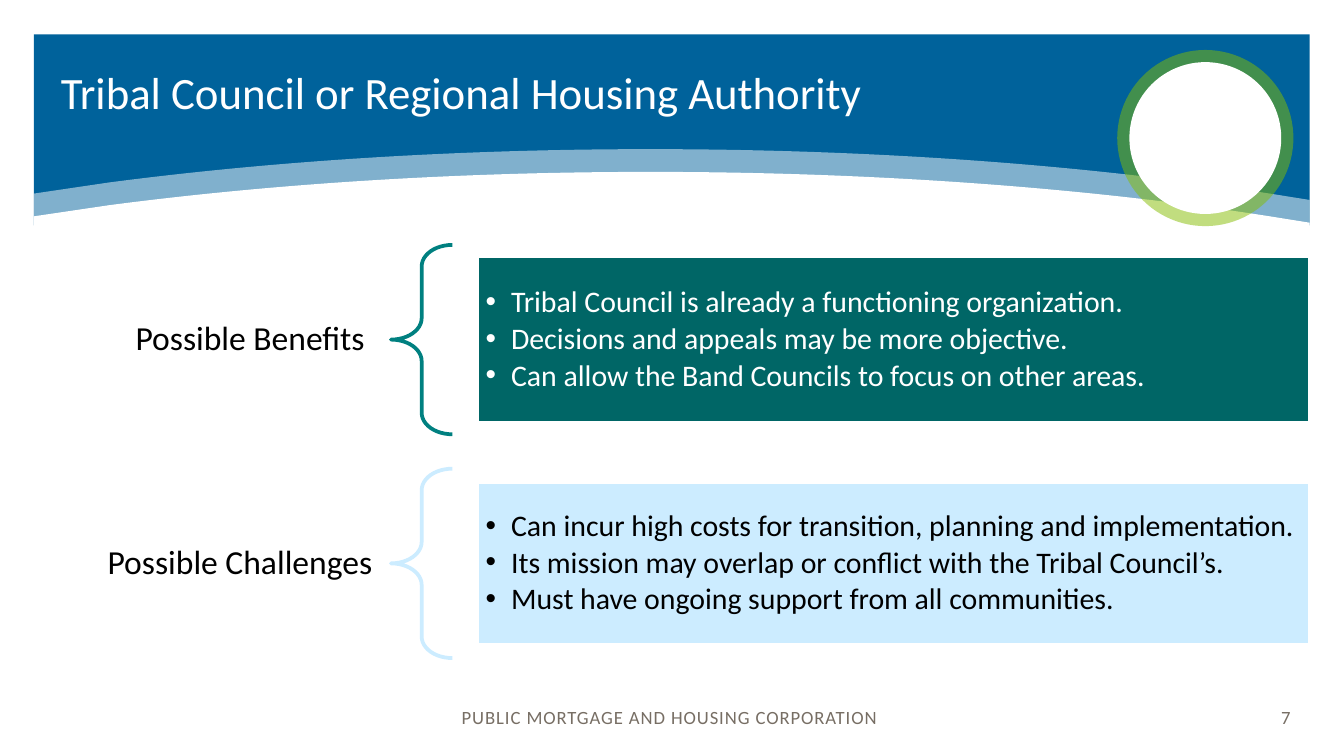
from lxml import etree
from pptx import Presentation
from pptx.dml.color import RGBColor
from pptx.enum import shapes, text
from pptx.oxml import ns
from pptx.util import Cm, Pt

COLORS = {
    "blue": "00629B", "white": "FFFFFF", "black": "000000", "green": "84BD00",
    "grey": "776E64", "teal": "008080", "dark_teal": "006666", "sky": "CCECFF",
}
SHAPE = shapes.MSO_SHAPE


def paint(shape, fill=None, line=None, alpha=None):
    """Set fill, opacity in percent and a 2 pt line; None leaves a part empty."""
    if fill:
        shape.fill.solid()
        shape.fill.fore_color.rgb = RGBColor.from_string(COLORS[fill])
    else:
        shape.fill.background()
    if alpha:
        color = shape.fill._xPr.find(".//" + ns.qn("a:srgbClr"))
        etree.SubElement(color, ns.qn("a:alpha"), val=str(alpha * 1000))
    if line:
        shape.line.color.rgb = RGBColor.from_string(COLORS[line])
        shape.line.width = Pt(2)
    else:
        shape.line.fill.background()


def write(shape, lines, size, color, margins, spc=None, bullet=False, **fmt):
    """Fill a shape with one paragraph per line; fmt holds paragraph attributes."""
    tf = shape.text_frame
    tf.word_wrap = True
    tf.auto_size = text.MSO_AUTO_SIZE.NONE
    tf.vertical_anchor = text.MSO_ANCHOR.MIDDLE
    tf.margin_left = tf.margin_right = Cm(margins[0])
    tf.margin_top = tf.margin_bottom = Cm(margins[1])
    for i, line in enumerate(lines):
        p = tf.paragraphs[0] if i == 0 else tf.add_paragraph()
        for name, value in fmt.items():
            setattr(p, name, value)
        if bullet:
            pPr = p._p.get_or_add_pPr()
            pPr.set("marL", str(Cm(0.48)))
            pPr.set("indent", str(-Cm(0.48)))
            etree.SubElement(pPr, ns.qn("a:buChar"), char="•")
        r = p.add_run()
        r.text = line
        r.font.name = "Calibri"
        r.font.size = Pt(size)
        r.font.color.rgb = RGBColor.from_string(COLORS[color])
        if spc:
            r._r.get_or_add_rPr().set("spc", str(spc))


prs = Presentation()
prs.slide_width, prs.slide_height = Cm(25.4), Cm(14.29)
s = prs.slides.add_slide(prs.slide_layouts[3])
title, *lists = s.placeholders

# Banner with two curved edges
left, right, bottom = 0.64, 24.75, 4.55
banner = s.shapes.add_shape(SHAPE.RECTANGLE, Cm(left), Cm(0.65), Cm(right - left), Cm(3.61))
banner.shadow.inherit = False
paint(banner, "blue")

# Points 2-4 and 5-7 are the control and end points of two Bezier curves
edge = [(left, 3.66), (2.06, 3.45), (5.11, 3.05), (8.59, 2.82), (12.29, 2.82),
        (16.74, 2.82), (20.88, 3.15), (24.31, 3.71), (right, 3.78)]
for drop, alpha in ((0, 50), (0.43, None)):
    points = [(Cm(x), Cm(y + drop)) for x, y in edge]
    points += [(Cm(right), Cm(bottom)), (Cm(left), Cm(bottom))]
    builder = s.shapes.build_freeform(*points[0])
    builder.add_line_segments(points[1:])
    wave = builder.convert_to_shape()
    segments = list(wave._element.iter(ns.qn("a:lnTo")))
    for first in (1, 4):
        curve = etree.Element(ns.qn("a:cubicBezTo"))
        segments[first].addprevious(curve)
        for segment in segments[first:first + 3]:
            curve.append(segment[0])
            segment.getparent().remove(segment)
    wave.shadow.inherit = False
    paint(wave, "white", alpha=alpha)

# Ring
cx, cy = 22.78, 2.61
for diameter, color, alpha in ((3.33, "green", 50), (2.87, "white", None)):
    disc = s.shapes.add_shape(SHAPE.OVAL, Cm(cx - diameter / 2), Cm(cy - diameter / 2),
                              Cm(diameter), Cm(diameter))
    disc.shadow.inherit = False
    paint(disc, color, alpha=alpha)

# Footer
footer = s.shapes.add_shape(SHAPE.RECTANGLE, 0, Cm(12.83), prs.slide_width, Cm(1.46))
footer.shadow.inherit = False
paint(footer, "white")
write(footer, ["PUBLIC MORTGAGE AND HOUSING CORPORATION "], 10, "grey", (0, 0), spc=50,
      alignment=text.PP_ALIGN.CENTER)
number = s.shapes.add_textbox(Cm(23.22), Cm(12.83), Cm(1.42), Cm(1.46))
write(number, ["7"], 10, "grey", (0.25, 0.13), spc=50, alignment=text.PP_ALIGN.RIGHT)

# Label, brace and list of each row
rows = [
    {"label": "Possible Benefits ", "top": 4.63, "list_top": 4.85, "height": 3.15,
     "brace": "teal", "fill": "dark_teal", "color": "white",
     "items": ["Tribal Council is already a functioning organization.",
               "Decisions and appeals may be more objective.",
               "Can allow the Band Councils to focus on other areas."]},
    {"label": "Possible Challenges", "top": 8.86, "list_top": 9.11, "height": 3.08,
     "brace": "sky", "fill": "sky", "color": "black",
     "items": ["Can incur high costs for transition, planning and implementation.",
               "Its mission may overlap or conflict with the Tribal Council’s.",
               "Must have ongoing support from all communities."]},
]
for row, body in zip(rows, lists):
    label = s.shapes.add_textbox(Cm(1.61), Cm(row["top"]), Cm(5.79), Cm(3.58))
    write(label, [row["label"]], 18, "black", (0.36, 0.13),
          alignment=text.PP_ALIGN.RIGHT, line_spacing=0.9)

    brace = s.shapes.add_shape(SHAPE.LEFT_BRACE, Cm(7.39), Cm(row["top"]), Cm(1.16), Cm(3.58))
    brace.shadow.inherit = False
    brace.adjustments[0] = 0.35
    paint(brace, line=row["brace"])

    body.left, body.top = Cm(9.02), Cm(row["list_top"])
    body.width, body.height = Cm(15.73), Cm(row["height"])
    paint(body, row["fill"], "white")
    write(body, row["items"], 16, row["color"], (0.16, 0.18), bullet=True,
          line_spacing=0.9, space_before=Pt(0), space_after=Pt(2.4))
    s.shapes._spTree.append(body._element)

# Title, brought in front of the banner
title.left, title.top, title.width, title.height = Cm(0.9), Cm(0.65), Cm(19.96), Cm(2.26)
write(title, ["Tribal Council or Regional Housing Authority"], 24, "white", (0.25, 0.13),
      alignment=text.PP_ALIGN.LEFT, line_spacing=Pt(26))
s.shapes._spTree.append(title._element)

prs.save("out.pptx")
